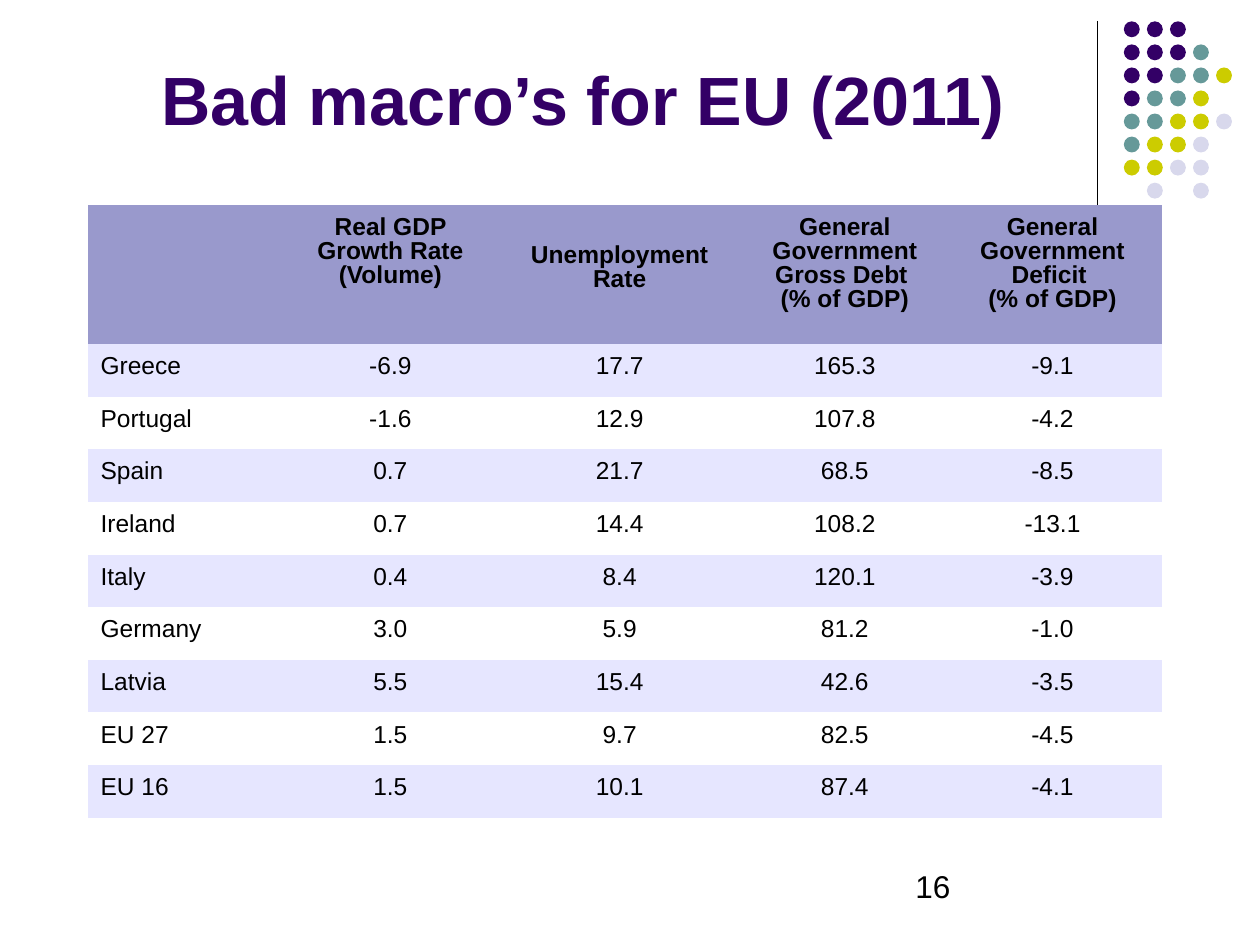
import dataclasses

import lxml.etree
import pptx
import pptx.dml.color
import pptx.enum.shapes
import pptx.enum.text
import pptx.oxml.ns
import pptx.slide
import pptx.table
import pptx.text.text
import pptx.util

Pt = pptx.util.Pt
Align = pptx.enum.text.PP_ALIGN

COLORS = {
    "black": "000000",
    "purple": "330066",
    "teal": "669999",
    "olive": "CCCC00",
    "lavender": "D8D8EC",
    "header": "9999CC",
    "band": "E6E6FF",
    "white": "FFFFFF",
}
DOT_COLORS = {"P": "purple", "T": "teal", "O": "olive", "L": "lavender"}
DOT_ROWS = ["PPP", "PPPT", "PPTTO", "PTTO", "TTOOL", "TOOL", "OOLL", " L L"]
DOT_LEFT, DOT_TOP, DOT_PITCH, DOT_SIZE = 642.2, 12.2, 13.17, 9.1

NO_STYLE_NO_GRID = "{2D5ABB26-0587-4C30-8999-92F81FD0307C}"
COLUMN_WIDTHS = [114.5, 116.6, 145.5, 111.8, 125.6]
HEADER_HEIGHT, ROW_HEIGHT = 79.6, 30.1
CELL_TOP_MARGIN, LOWERED_TOP_MARGIN = 6.5, 22.5
LOWERED_HEADER = "Unemployment Rate"
HEADERS = [
    "",
    "Real GDP Growth Rate (Volume)",
    LOWERED_HEADER,
    "General Government Gross Debt \n(% of GDP)",
    "General Government Deficit \n(% of GDP)",
]


@dataclasses.dataclass
class Economy:
    name: str
    growth: str
    unemployment: str
    debt: str
    deficit: str


ECONOMIES = [
    Economy("Greece", "-6.9", "17.7", "165.3", "-9.1"),
    Economy("Portugal", "-1.6", "12.9", "107.8", "-4.2"),
    Economy("Spain", "0.7", "21.7", "68.5", "-8.5"),
    Economy("Ireland", "0.7", "14.4", "108.2", "-13.1"),
    Economy("Italy", "0.4", "8.4", "120.1", "-3.9"),
    Economy("Germany", "3.0", "5.9", "81.2", "-1.0"),
    Economy("Latvia", "5.5", "15.4", "42.6", "-3.5"),
    Economy("EU 27", "1.5", "9.7", "82.5", "-4.5"),
    Economy("EU 16", "1.5", "10.1", "87.4", "-4.1"),
]


@dataclasses.dataclass
class TextStyle:
    size: float
    color: str = "black"
    bold: bool = False
    alignment: Align = Align.LEFT
    line_spacing: float = 1.0


TITLE = TextStyle(39, "purple", True, Align.CENTER)
HEADER = TextStyle(14, bold=True, alignment=Align.CENTER, line_spacing=0.87)
NAME = TextStyle(14, line_spacing=0.87)
VALUE = TextStyle(14, alignment=Align.CENTER, line_spacing=0.87)
PAGE_NUMBER = TextStyle(18)


def rgb(name: str) -> pptx.dml.color.RGBColor:
    return pptx.dml.color.RGBColor.from_string(COLORS[name])


def write_text(text_frame: pptx.text.text.TextFrame, text: str, style: TextStyle) -> None:
    text_frame.text = text
    for paragraph in text_frame.paragraphs:
        paragraph.alignment = style.alignment
        paragraph.line_spacing = style.line_spacing
        for run in paragraph.runs:
            run.font.name = "Arial"
            run.font.size = Pt(style.size)
            run.font.bold = style.bold
            run.font.color.rgb = rgb(style.color)


def add_text(slide: pptx.slide.Slide, left: float, top: float, width: float,
             height: float, text: str, style: TextStyle,
             anchor: pptx.enum.text.MSO_ANCHOR) -> None:
    box = slide.shapes.add_textbox(Pt(left), Pt(top), Pt(width), Pt(height))
    box.text_frame.word_wrap = True
    box.text_frame.vertical_anchor = anchor
    write_text(box.text_frame, text, style)


def add_divider(slide: pptx.slide.Slide) -> None:
    divider = slide.shapes.add_connector(
        pptx.enum.shapes.MSO_CONNECTOR.STRAIGHT, Pt(627), Pt(12), Pt(627), Pt(132))
    divider.line.color.rgb = rgb("black")
    divider.line.width = Pt(0.75)
    lxml.etree.SubElement(divider._element.spPr, pptx.oxml.ns.qn("a:effectLst"))


def add_dots(slide: pptx.slide.Slide) -> None:
    for row, pattern in enumerate(DOT_ROWS):
        for column, letter in enumerate(pattern):
            if letter == " ":
                continue
            dot = slide.shapes.add_shape(
                pptx.enum.shapes.MSO_SHAPE.OVAL,
                Pt(DOT_LEFT + column * DOT_PITCH), Pt(DOT_TOP + row * DOT_PITCH),
                Pt(DOT_SIZE), Pt(DOT_SIZE))
            dot.shadow.inherit = False
            dot.fill.solid()
            dot.fill.fore_color.rgb = rgb(DOT_COLORS[letter])
            dot.line.fill.background()


def fill_cell(cell: pptx.table._Cell, text: str, style: TextStyle, fill: str) -> None:
    cell.fill.solid()
    cell.fill.fore_color.rgb = rgb(fill)
    lowered = text == LOWERED_HEADER
    cell.margin_top = Pt(LOWERED_TOP_MARGIN if lowered else CELL_TOP_MARGIN)
    write_text(cell.text_frame, text, style)


def add_economy_table(slide: pptx.slide.Slide) -> None:
    rows = [HEADERS] + [dataclasses.astuple(economy) for economy in ECONOMIES]
    height = HEADER_HEIGHT + ROW_HEIGHT * len(ECONOMIES)
    table = slide.shapes.add_table(
        len(rows), len(HEADERS), Pt(50.3), Pt(117),
        Pt(sum(COLUMN_WIDTHS)), Pt(height)).table
    table._tbl.tblPr.find(pptx.oxml.ns.qn("a:tableStyleId")).text = NO_STYLE_NO_GRID
    for column, width in zip(table.columns, COLUMN_WIDTHS):
        column.width = Pt(width)
    for row_index, texts in enumerate(rows):
        is_header = row_index == 0
        table.rows[row_index].height = Pt(HEADER_HEIGHT if is_header else ROW_HEIGHT)
        fill = "header" if is_header else "band" if row_index % 2 else "white"
        for column_index, text in enumerate(texts):
            style = HEADER if is_header else VALUE if column_index else NAME
            fill_cell(table.cell(row_index, column_index), text, style, fill)


def main() -> None:
    presentation = pptx.Presentation()
    presentation.slide_width, presentation.slide_height = Pt(720), Pt(540)
    slide = presentation.slides.add_slide(presentation.slide_layouts[6])
    add_divider(slide)
    add_dots(slide)
    add_text(slide, 36, 9.4, 594, 73.4, "Bad macro’s for EU (2011)", TITLE,
             pptx.enum.text.MSO_ANCHOR.BOTTOM)
    add_economy_table(slide)
    add_text(slide, 516, 492, 168, 36, "16", PAGE_NUMBER,
             pptx.enum.text.MSO_ANCHOR.TOP)
    presentation.save("out.pptx")


if __name__ == "__main__":
    main()
